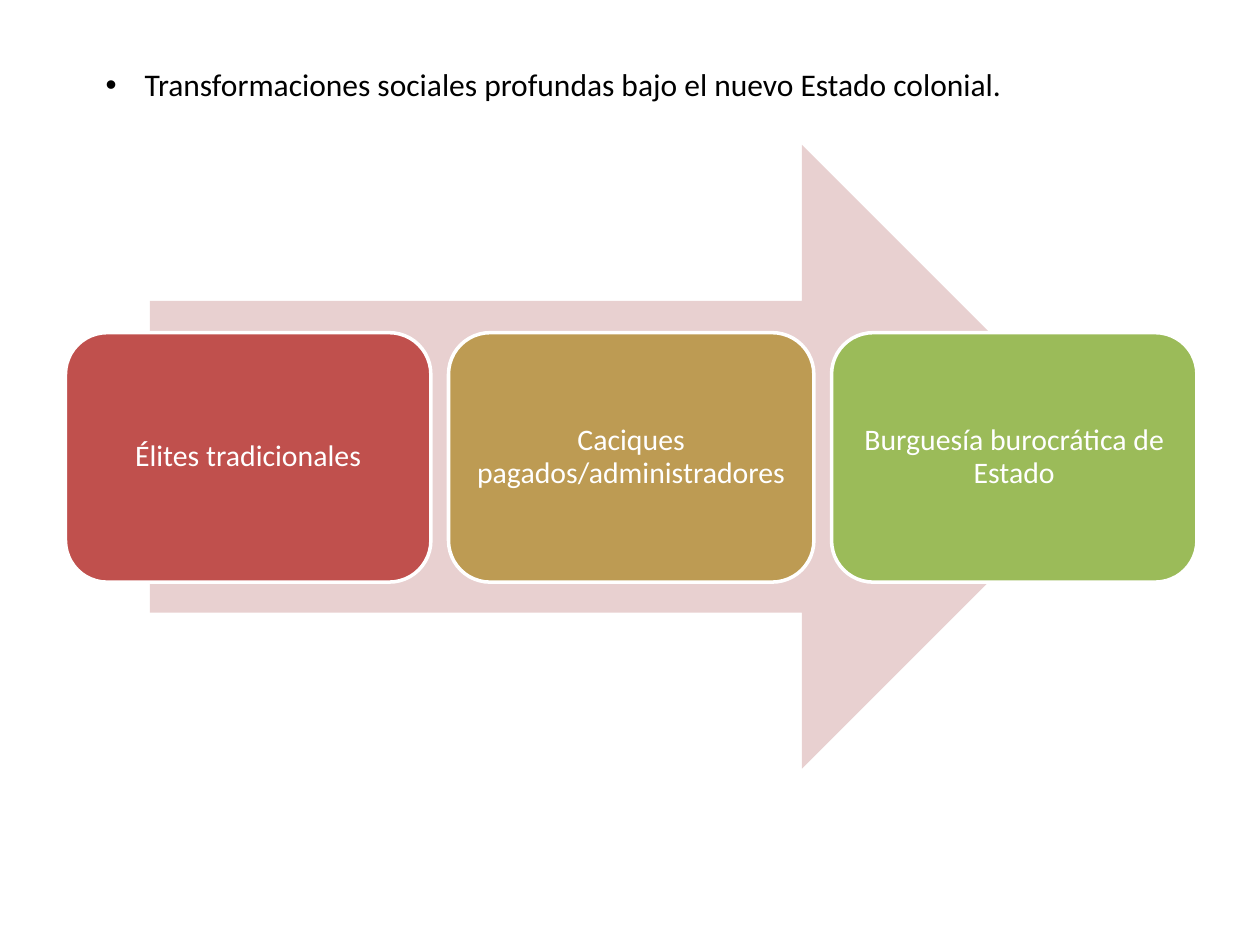
from lxml import etree
from pptx import Presentation
from pptx.dml.color import RGBColor
from pptx.enum.shapes import MSO_SHAPE
from pptx.enum.text import MSO_ANCHOR, PP_ALIGN
from pptx.oxml.ns import qn
from pptx.util import Inches, Pt

ARROW = MSO_SHAPE.RIGHT_ARROW
ROUND = MSO_SHAPE.ROUNDED_RECTANGLE
LEFT, CENTER = PP_ALIGN.LEFT, PP_ALIGN.CENTER
MIDDLE = MSO_ANCHOR.MIDDLE

COLORS = {
    "arrow": "E8D0D0",
    "red": "C0504D",
    "gold": "BD9B53",
    "green": "9BBB59",
    "white": "FFFFFF",
    "black": "000000",
}
TITLE = "Transformaciones sociales profundas bajo el nuevo Estado colonial."
STAGES = [
    ("Élites tradicionales", "red"),
    ("Caciques pagados/administradores", "gold"),
    ("Burguesía burocrática de Estado", "green"),
]
START, TOP, WIDTH, HEIGHT, GAP = 0.52, 2.64, 2.9, 1.98, 0.14
PAD = 0.07
INDENT = 0.31


def color(name):
    return RGBColor.from_string(COLORS[name])


def write(frame, text, size=18, ink="black", align=LEFT, lines=None):
    frame.word_wrap = True
    para = frame.paragraphs[0]
    para.alignment = align
    if lines:
        para.line_spacing = lines
    run = para.add_run()
    run.text = text
    run.font.size = Pt(size)
    run.font.name = "Calibri"
    run.font.color.rgb = color(ink)
    return para


def block(slide, kind, box, fill):
    shape = slide.shapes.add_shape(kind, *map(Inches, box))
    shape.shadow.inherit = False
    shape.fill.solid()
    shape.fill.fore_color.rgb = color(fill)
    shape.line.fill.background()
    return shape


def add_bullet(para):
    props = para._p.get_or_add_pPr()
    props.set("marL", str(Inches(INDENT)))
    props.set("indent", str(-Inches(INDENT)))
    font = etree.SubElement(props, qn("a:buFont"))
    font.set("typeface", "Arial")
    mark = etree.SubElement(props, qn("a:buChar"))
    mark.set("char", "•")


def main():
    deck = Presentation()
    deck.slide_width, deck.slide_height = Inches(10), Inches(7.5)
    slide = deck.slides.add_slide(deck.slide_layouts[6])

    block(slide, ARROW, (1.19, 1.15, 7.65, 4.95), "arrow")
    for i, (text, fill) in enumerate(STAGES):
        left = START + i * (WIDTH + GAP)
        stage = block(slide, ROUND, (left, TOP, WIDTH, HEIGHT), fill)
        stage.line.color.rgb = color("white")
        stage.line.width = Pt(2)
        frame = stage.text_frame
        frame.vertical_anchor = MIDDLE
        frame.margin_left = frame.margin_right = Inches(PAD)
        frame.margin_top = frame.margin_bottom = Inches(PAD)
        write(frame, text, size=17, ink="white", align=CENTER, lines=0.9)

    title = slide.shapes.add_textbox(*map(Inches, (0.74, 0.47, 7.93, 0.4)))
    add_bullet(write(title.text_frame, TITLE))
    deck.save("out.pptx")


if __name__ == "__main__":
    main()
